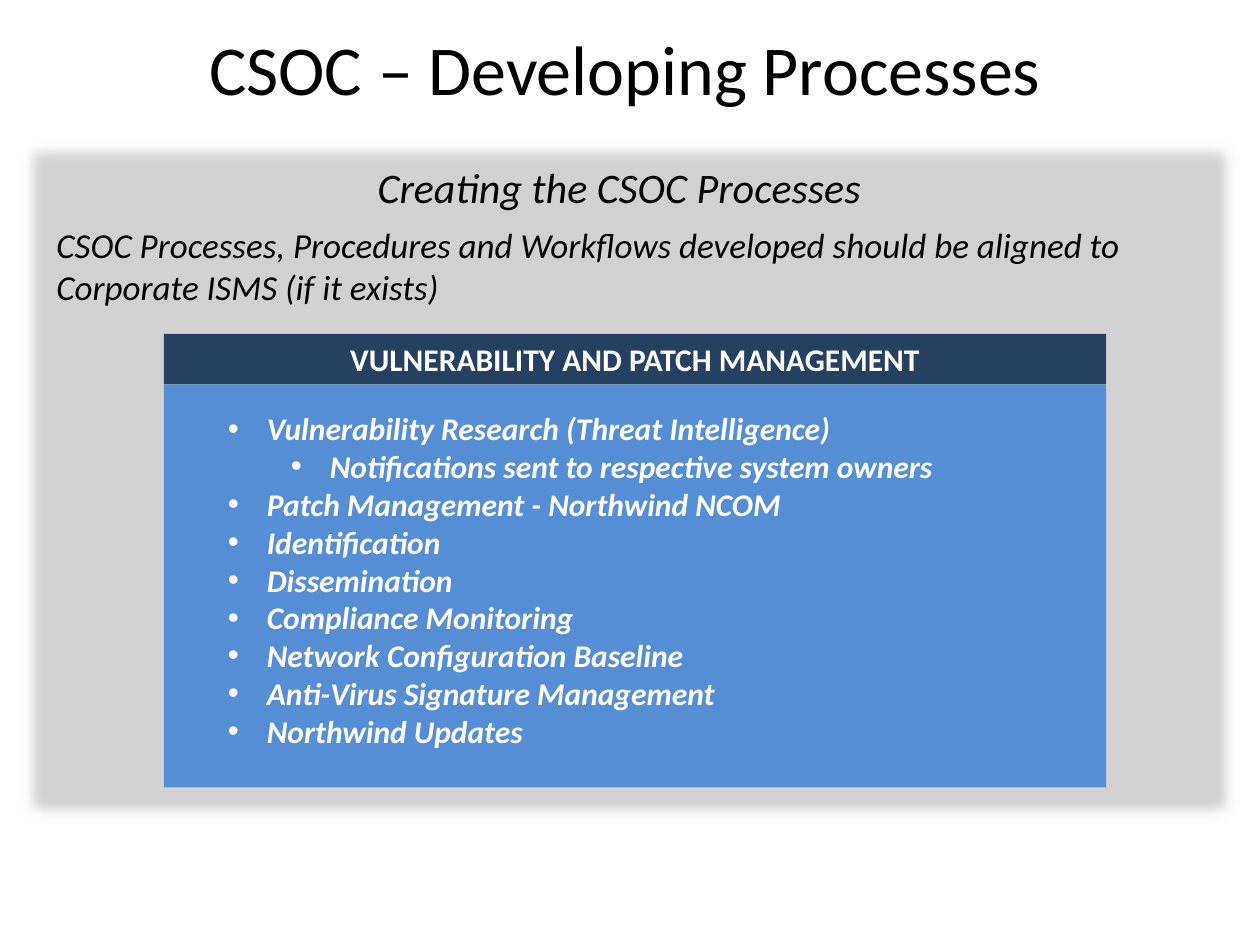
from lxml import etree
from pptx import Presentation
from pptx import util as u
from pptx.dml.color import RGBColor
from pptx.enum import shapes, text
from pptx.oxml.ns import qn

HUES = {"panel": "D1D1D1", "body": "558ED5", "head": "254061",
        "white": "FFFFFF", "black": "000000"}


def box(area, hue):
    rect = slide.shapes.add_shape(shapes.MSO_SHAPE.RECTANGLE, *map(u.Inches, area))
    rect.shadow.inherit = False
    rect.fill.solid()
    rect.fill.fore_color.rgb = RGBColor.from_string(HUES[hue])
    rect.line.fill.background()
    return rect


def style(para, size, hue, bold=False, italic=False):
    for run in para.runs:
        font = run.font
        font.name, font.size = "Calibri", u.Pt(size)
        font.bold, font.italic = bold, italic
        font.color.rgb = RGBColor.from_string(HUES[hue])


deck = Presentation()
deck.slide_width, deck.slide_height = u.Inches(10), u.Inches(7.5)
slide = deck.slides.add_slide(deck.slide_layouts[5])

title = slide.shapes.title
title.left, title.top = u.Inches(0.43), u.Inches(0.14)
title.width, title.height = u.Inches(9.06), u.Inches(0.79)
title.text_frame.text = "CSOC – Developing Processes"
title.text_frame.vertical_anchor = text.MSO_ANCHOR.MIDDLE
title.text_frame.paragraphs[0].alignment = text.PP_ALIGN.CENTER
style(title.text_frame.paragraphs[0], 40, "black")

panel = box((0.12, 1.07, 9.76, 5.51), "panel")
effects = panel._element.spPr.find(qn("a:effectLst"))
etree.SubElement(effects, qn("a:softEdge"), rad=str(u.Inches(0.12)))

box((1.3, 3.05, 7.48, 3.2), "body")
head = box((1.3, 2.65, 7.48, 0.4), "head")
head.text_frame.text = "VULNERABILITY AND PATCH MANAGEMENT"
head.text_frame.paragraphs[0].alignment = text.PP_ALIGN.CENTER
style(head.text_frame.paragraphs[0], 18, "white", bold=True)

items = [
    (0, "Vulnerability Research (Threat Intelligence)"),
    (1, "Notifications sent to respective system owners"),
    (0, "Patch Management - Northwind NCOM"),
    (0, "Identification"),
    (0, "Dissemination"),
    (0, "Compliance Monitoring"),
    (0, "Network Configuration Baseline"),
    (0, "Anti-Virus Signature Management"),
    (0, "Northwind Updates"),
]
tasks = slide.shapes.add_textbox(*map(u.Inches, (1.71, 3.2, 8.27, 3.13))).text_frame
tasks.word_wrap = True
tasks.text = "\n".join(words for level, words in items)
for para, (level, words) in zip(tasks.paragraphs, items):
    para.level = level
    props = para._p.get_or_add_pPr()
    props.set("marL", str(u.Inches(0.31 + 0.5 * level)))
    props.set("indent", str(u.Inches(-0.31)))
    etree.SubElement(props, qn("a:buFont"), typeface="Arial")
    etree.SubElement(props, qn("a:buChar"), char="•")
    style(para, 18, "white", bold=True, italic=True)

intro = slide.shapes.add_textbox(*map(u.Inches, (0.35, 1.23, 9.13, 1.3))).text_frame
intro.word_wrap = True
intro.text = "Creating the CSOC Processes"
lead = intro.paragraphs[0]
lead.alignment = text.PP_ALIGN.CENTER
style(lead, 24, "black", italic=True)
note = intro.add_paragraph()
note.text = ("CSOC Processes, Procedures and Workflows developed should be "
             "aligned to Corporate ISMS (if it exists)")
note.space_before = u.Pt(7)
style(note, 20, "black", italic=True)

deck.save("out.pptx")
